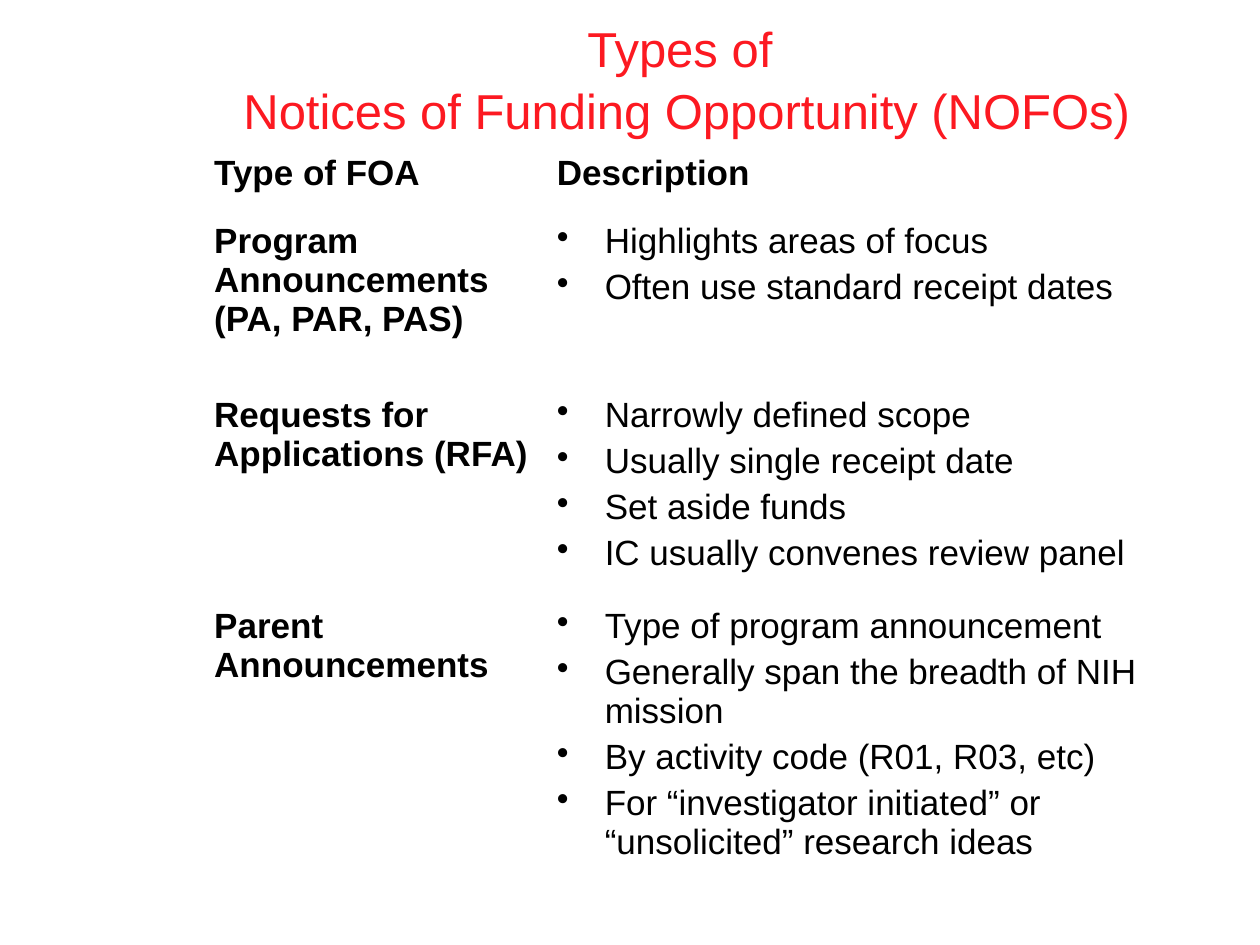
from dataclasses import dataclass

from lxml import etree
from pptx import Presentation
from pptx.dml.color import RGBColor
from pptx.enum.text import MSO_ANCHOR, PP_ALIGN
from pptx.oxml.ns import qn
from pptx.slide import Slide
from pptx.util import Inches, Pt

CENTER = PP_ALIGN.CENTER
LEFT = PP_ALIGN.LEFT
TOP = MSO_ANCHOR.TOP
BLANK_LAYOUT = 6
SLIDE_WIDTH, SLIDE_HEIGHT = 10, 7.5
BULLET_INDENT = Inches(0.38)

HEADER = ("Type of FOA", "Description")
NOTICE_TYPES = [
    ("Program Announcements (PA, PAR, PAS)",
     ["Highlights areas of focus", "Often use standard receipt dates"]),
    ("Requests for Applications (RFA)",
     ["Narrowly defined scope", "Usually single receipt date",
      "Set aside funds", "IC usually convenes review panel"]),
    ("Parent Announcements",
     ["Type of program announcement",
      "Generally span the breadth of NIH mission",
      "By activity code (R01, R03, etc)",
      "For “investigator initiated” or “unsolicited” research ideas"]),
]
COLUMN_SHARES = (0.272, 0.56)
ROW_SHARES = (0.072, 0.184, 0.223, 0.307)


def color(value):
    return RGBColor.from_string(value)


def write(paragraph, text, *, font, size, fill, bold=False, align=LEFT,
          bullet=False, space_before=0, line_spacing=None):
    properties = paragraph._p.get_or_add_pPr()
    if bullet:
        properties.set("marL", str(BULLET_INDENT))
        properties.set("indent", str(-BULLET_INDENT))
        etree.SubElement(properties, qn("a:buChar"), char="•")
    paragraph.alignment = align
    paragraph.space_before = Pt(space_before)
    if line_spacing:
        paragraph.line_spacing = line_spacing
    paragraph.text = text
    for run in paragraph.runs:
        run.font.name = font
        run.font.size = Pt(size)
        run.font.bold = bold
        run.font.color.rgb = color(fill)


@dataclass
class SlideBuilder:
    slide: Slide
    font: str = "Arial"
    title_color: str = "FC1921"
    text_color: str = "000000"
    border_color: str = "FFFFFF"
    title_size: int = 28
    body_size: int = 20
    outer_border: float = 2.25
    inner_border: float = 1
    bullet_gap: int = 4

    def place(self, left, top, width, height):
        return (Inches(left * SLIDE_WIDTH), Inches(top * SLIDE_HEIGHT),
                Inches(width * SLIDE_WIDTH), Inches(height * SLIDE_HEIGHT))

    def title(self, text, box):
        frame = self.slide.shapes.add_textbox(*self.place(*box)).text_frame
        frame.word_wrap = True
        frame.vertical_anchor = TOP
        write(frame.paragraphs[0], text, font=self.font, size=self.title_size,
              fill=self.title_color, align=CENTER, line_spacing=1.05)

    def table(self, rows, left, top, column_shares, row_shares):
        box = self.place(left, top, sum(column_shares), sum(row_shares))
        shape = self.slide.shapes.add_table(len(rows), len(column_shares), *box)
        table = shape.table
        table.first_row = False
        table.horz_banding = False
        for column, share in zip(table.columns, column_shares):
            column.width = Inches(share * SLIDE_WIDTH)
        for row, share in zip(table.rows, row_shares):
            row.height = Inches(share * SLIDE_HEIGHT)
        last_row, last_column = len(rows) - 1, len(column_shares) - 1
        for row_index, row in enumerate(rows):
            for column_index, content in enumerate(row):
                cell = table.cell(row_index, column_index)
                self.borders(cell, {"L": column_index == 0,
                                    "R": column_index == last_column,
                                    "T": row_index == 0,
                                    "B": row_index == last_row})
                cell.fill.background()
                self.cell_text(cell, content)

    def borders(self, cell, outer_sides):
        properties = cell._tc.get_or_add_tcPr()
        for side, is_outer in outer_sides.items():
            width = self.outer_border if is_outer else self.inner_border
            line = etree.SubElement(properties, qn(f"a:ln{side}"),
                                    w=str(Pt(width)))
            fill = etree.SubElement(line, qn("a:solidFill"))
            etree.SubElement(fill, qn("a:srgbClr"), val=self.border_color)

    def cell_text(self, cell, content):
        bulleted = isinstance(content, list)
        frame = cell.text_frame
        for index, text in enumerate(content if bulleted else [content]):
            paragraph = frame.add_paragraph() if index else frame.paragraphs[0]
            write(paragraph, text, font=self.font, size=self.body_size,
                  fill=self.text_color, bold=not bulleted, bullet=bulleted,
                  space_before=self.bullet_gap if index else 0)


def main():
    presentation = Presentation()
    presentation.slide_width = Inches(SLIDE_WIDTH)
    presentation.slide_height = Inches(SLIDE_HEIGHT)
    layout = presentation.slide_layouts[BLANK_LAYOUT]
    builder = SlideBuilder(presentation.slides.add_slide(layout))
    builder.title("Types of \vNotices of Funding Opportunity (NOFOs)",
                  (0.1, 0.01, 0.89, 0.11))
    builder.table([HEADER, *NOTICE_TYPES], 0.16, 0.156,
                  COLUMN_SHARES, ROW_SHARES)
    presentation.save("out.pptx")


if __name__ == "__main__":
    main()
